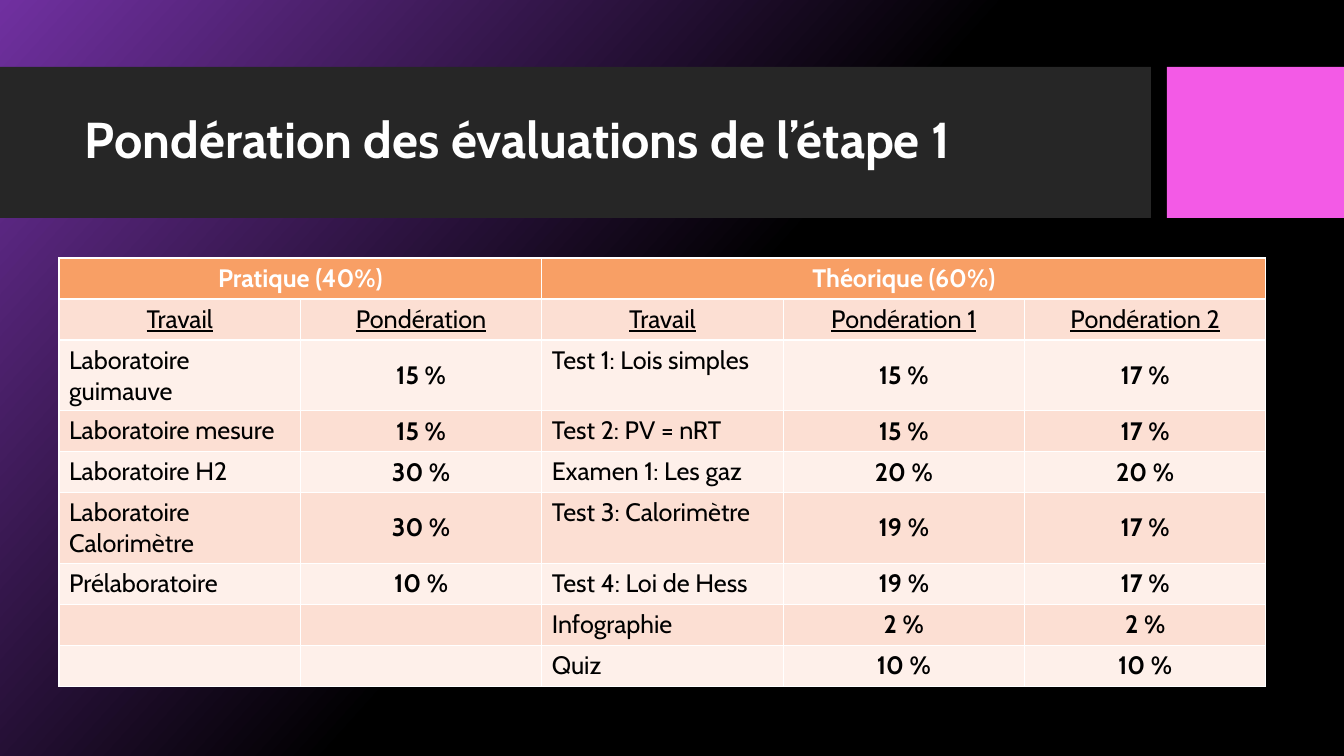
from pptx import Presentation
from pptx.dml.color import RGBColor
from pptx.enum.shapes import MSO_SHAPE
from pptx.enum.text import MSO_ANCHOR, PP_ALIGN
from pptx.util import Emu, Pt

TITLE = "Pondération des évaluations de l’étape 1"
# Heading, first column, number of columns
GROUPS = [("Pratique (40%)", 0, 2), ("Théorique (60%)", 2, 3)]
COLUMN_TITLES = ["Travail", "Pondération", "Travail", "Pondération 1", "Pondération 2"]
EVALUATIONS = [
    ("Laboratoire guimauve", "15 %", "Test 1: Lois simples", "15 %", "17 %"),
    ("Laboratoire mesure", "15 %", "Test 2: PV = nRT", "15 %", "17 %"),
    ("Laboratoire H2", "30 %", "Examen 1: Les gaz", "20 %", "20 %"),
    ("Laboratoire Calorimètre", "30 %", "Test 3: Calorimètre", "19 %", "17 %"),
    ("Prélaboratoire", "10 %", "Test 4: Loi de Hess", "19 %", "17 %"),
    ("", "", "Infographie", "2 %", "2 %"),
    ("", "", "Quiz", "10 %", "10 %"),
]
TASK_COLUMNS = (0, 2)

FONT = "Cabin"
WHITE = RGBColor(0xFF, 0xFF, 0xFF)
BLACK = RGBColor(0x00, 0x00, 0x00)
PURPLE = RGBColor(0x70, 0x30, 0xA0)
CHARCOAL = RGBColor(0x26, 0x26, 0x26)
PINK = RGBColor(0xF3, 0x5A, 0xE6)
ORANGE = RGBColor(0xF8, 0x9F, 0x65)
BANDS = (RGBColor(0xFC, 0xDF, 0xD3), RGBColor(0xFE, 0xF0, 0xEA))

LEFT, CENTER = PP_ALIGN.LEFT, PP_ALIGN.CENTER
TOP, MIDDLE = MSO_ANCHOR.TOP, MSO_ANCHOR.MIDDLE
RECTANGLE = MSO_SHAPE.RECTANGLE

SLIDE_WIDTH, SLIDE_HEIGHT = 1344, 756
BARS = [((0, 67, 1151, 151), CHARCOAL), ((1167, 67, 177, 151), PINK)]
TITLE_BOX = (75, 83, 1059, 119)
TABLE_LEFT, TABLE_TOP, TABLE_WIDTH, ROW_HEIGHT = 59, 258, 1207, 41


def px(length):
    return Emu(round(length * 914400 / 100.8))


def write(frame, text, size=18, color=BLACK, bold=False, underline=False,
          align=LEFT, anchor=TOP, line_spacing=None):
    frame.vertical_anchor = anchor
    paragraph = frame.paragraphs[0]
    paragraph.alignment = align
    paragraph.line_spacing = line_spacing
    run = paragraph.add_run()
    run.text = text
    run.font.name = FONT
    run.font.size = Pt(size)
    run.font.color.rgb = color
    run.font.bold = bold
    run.font.underline = underline


def write_cell(cell, text, anchor=TOP, **text_format):
    cell.vertical_anchor = anchor
    if text:
        write(cell.text_frame, text, anchor=None, **text_format)


def paint_background(slide):
    fill = slide.background.fill
    fill.gradient()
    fill.gradient_angle = 360 - 42
    for stop, color, position in zip(fill.gradient_stops, (PURPLE, BLACK), (0, 0.5)):
        stop.color.rgb = color
        stop.position = position


def add_bars(slide):
    for box, color in BARS:
        shape = slide.shapes.add_shape(RECTANGLE, *map(px, box))
        shape.shadow.inherit = False
        shape.fill.solid()
        shape.fill.fore_color.rgb = color
        shape.line.fill.background()


def add_title(slide):
    frame = slide.shapes.add_textbox(*map(px, TITLE_BOX)).text_frame
    frame.word_wrap = True
    write(frame, TITLE, size=36, color=WHITE, bold=True, anchor=MIDDLE, line_spacing=0.9)


def add_evaluation_table(slide):
    row_count = len(EVALUATIONS) + 2
    table = slide.shapes.add_table(
        row_count, len(COLUMN_TITLES), px(TABLE_LEFT), px(TABLE_TOP),
        px(TABLE_WIDTH), px(ROW_HEIGHT * row_count)).table

    for row_index in range(row_count):
        for column_index in range(len(COLUMN_TITLES)):
            fill = table.cell(row_index, column_index).fill
            fill.solid()
            fill.fore_color.rgb = BANDS[(row_index - 1) % 2] if row_index else ORANGE

    for heading, first, span in GROUPS:
        cell = table.cell(0, first)
        cell.merge(table.cell(0, first + span - 1))
        write_cell(cell, heading, color=WHITE, bold=True, align=CENTER)

    for column_index, column_title in enumerate(COLUMN_TITLES):
        write_cell(table.cell(1, column_index), column_title, underline=True, align=CENTER)

    for row_index, evaluation in enumerate(EVALUATIONS, start=2):
        for column_index, text in enumerate(evaluation):
            cell = table.cell(row_index, column_index)
            if column_index in TASK_COLUMNS:
                write_cell(cell, text)
            else:
                write_cell(cell, text, bold=True, align=CENTER, anchor=MIDDLE)


def main():
    presentation = Presentation()
    presentation.slide_width = px(SLIDE_WIDTH)
    presentation.slide_height = px(SLIDE_HEIGHT)
    slide = presentation.slides.add_slide(presentation.slide_layouts[6])
    paint_background(slide)
    add_bars(slide)
    add_title(slide)
    add_evaluation_table(slide)
    presentation.save("out.pptx")


if __name__ == "__main__":
    main()
